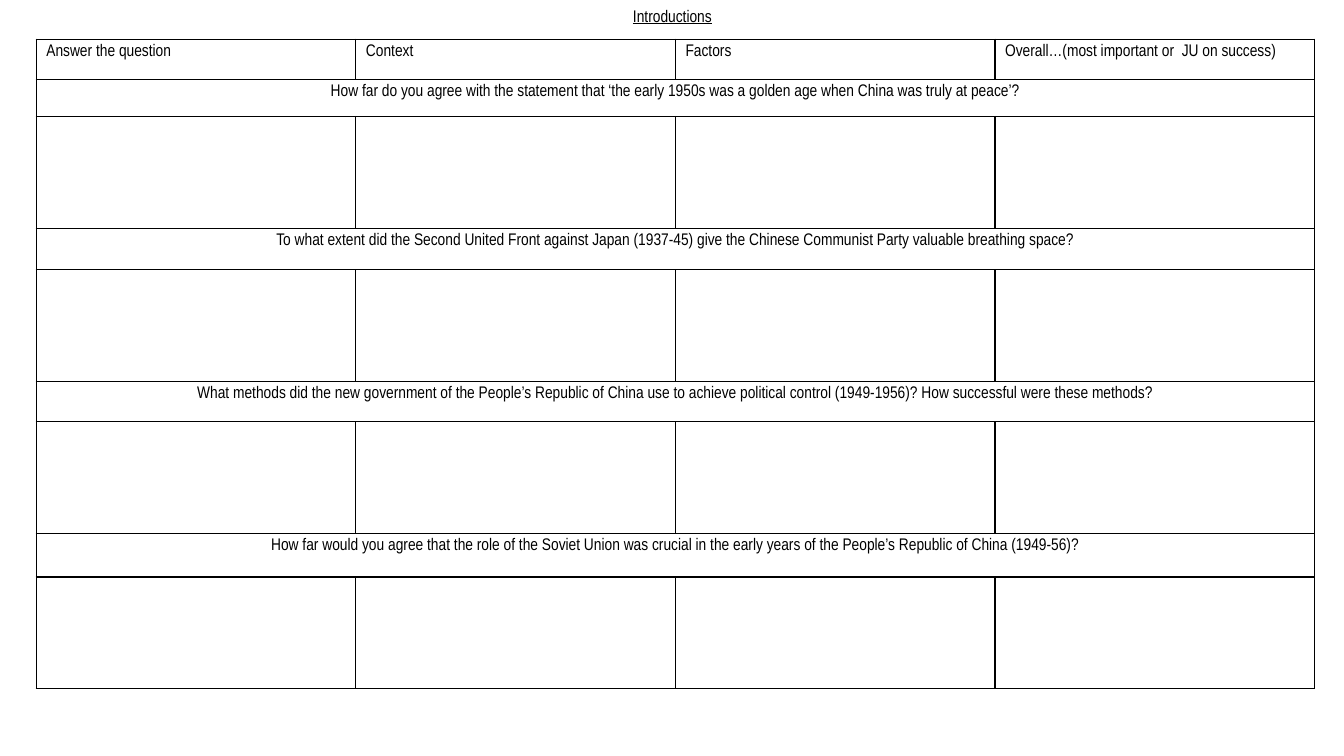
from dataclasses import dataclass

from lxml.etree import SubElement as Sub
from pptx import Presentation
from pptx.dml.color import RGBColor as Rgb
from pptx.enum.text import MSO_ANCHOR as Anchor, PP_ALIGN as Align
from pptx.oxml.ns import qn
from pptx.slide import Slide
from pptx.table import Table, _Cell as Cell
from pptx.text.text import _Paragraph as Para
from pptx.util import Inches, Pt

WIDE, HIGH = Inches(13.33), Inches(7.5)
COLORS = {"ink": "000000", "page": "FFFFFF"}
FONT = {"name": "Arial Narrow", "size": Pt(12), "bold": False}
HEADS = (
    "Answer the question",
    "Context",
    "Factors",
    "Overall…(most important or  JU on success)",
)
HEAD_ROW, BLANK_ROW = 5.33, 14.8
COL = 23.78


@dataclass(frozen=True)
class Topic:
    text: str
    tall: float


TOPICS = (
    Topic("How far do you agree with the statement that ‘the early 1950s was a golden age "
          "when China was truly at peace’?", 4.87),
    Topic("To what extent did the Second United Front against Japan (1937-45) give the "
          "Chinese Communist Party valuable breathing space?", 5.47),
    Topic("What methods did the new government of the People’s Republic of China use to "
          "achieve political control (1949-1956)? How successful were these methods?", 5.33),
    Topic("How far would you agree that the role of the Soviet Union was crucial in the "
          "early years of the People’s Republic of China (1949-56)?", 5.73),
)


def across(share: float) -> int:
    return round(WIDE * share / 100)


def down(share: float) -> int:
    return round(HIGH * share / 100)


def write(para: Para, text: str, align: Align, **extra: bool) -> None:
    para.alignment = align
    run = para.add_run()
    run.text = text
    for key, value in {**FONT, **extra}.items():
        setattr(run.font, key, value)
    run.font.color.rgb = Rgb.from_string(COLORS["ink"])


def frame(cell: Cell) -> None:
    props = cell._tc.get_or_add_tcPr()
    for side in ("a:lnL", "a:lnR", "a:lnT", "a:lnB"):
        line = Sub(props, qn(side), w=str(Pt(1)))
        fill = Sub(line, qn("a:solidFill"))
        Sub(fill, qn("a:srgbClr"), val=COLORS["ink"])
    cell.fill.solid()
    cell.fill.fore_color.rgb = Rgb.from_string(COLORS["page"])


def add_title(slide: Slide) -> None:
    title = slide.shapes.title
    place = {"left": across(6.9), "top": down(-7.47),
             "width": across(86.27), "height": down(19.33)}
    for key, value in place.items():
        setattr(title, key, value)
    title.text_frame.vertical_anchor = Anchor.MIDDLE
    para = title.text_frame.paragraphs[0]
    para.line_spacing = 0.9
    write(para, "Introductions", Align.CENTER, underline=True)


def add_grid(slide: Slide) -> Table:
    rows = [HEAD_ROW]
    for topic in TOPICS:
        rows += [topic.tall, BLANK_ROW]
    count = len(HEADS)
    grid = slide.shapes.add_table(
        len(rows), count, across(2.7), down(5.2),
        across(COL * count), down(sum(rows))).table
    for key in ("first_row", "horz_banding"):
        setattr(grid, key, False)
    for row, tall in zip(grid.rows, rows):
        row.height = down(tall)
    for col in grid.columns:
        col.width = across(COL)
    for cell in grid.iter_cells():
        frame(cell)
    return grid


def fill_grid(grid: Table) -> None:
    last = len(HEADS) - 1
    for col, head in enumerate(HEADS):
        write(grid.cell(0, col).text_frame.paragraphs[0], head, Align.LEFT)
    for index, topic in enumerate(TOPICS):
        row = 2 * index + 1
        cell = grid.cell(row, 0)
        cell.merge(grid.cell(row, last))
        write(cell.text_frame.paragraphs[0], topic.text, Align.CENTER)


def main() -> None:
    deck = Presentation()
    deck.slide_width, deck.slide_height = WIDE, HIGH
    slide = deck.slides.add_slide(deck.slide_layouts[5])
    add_title(slide)
    fill_grid(add_grid(slide))
    deck.save("out.pptx")


if __name__ == "__main__":
    main()
